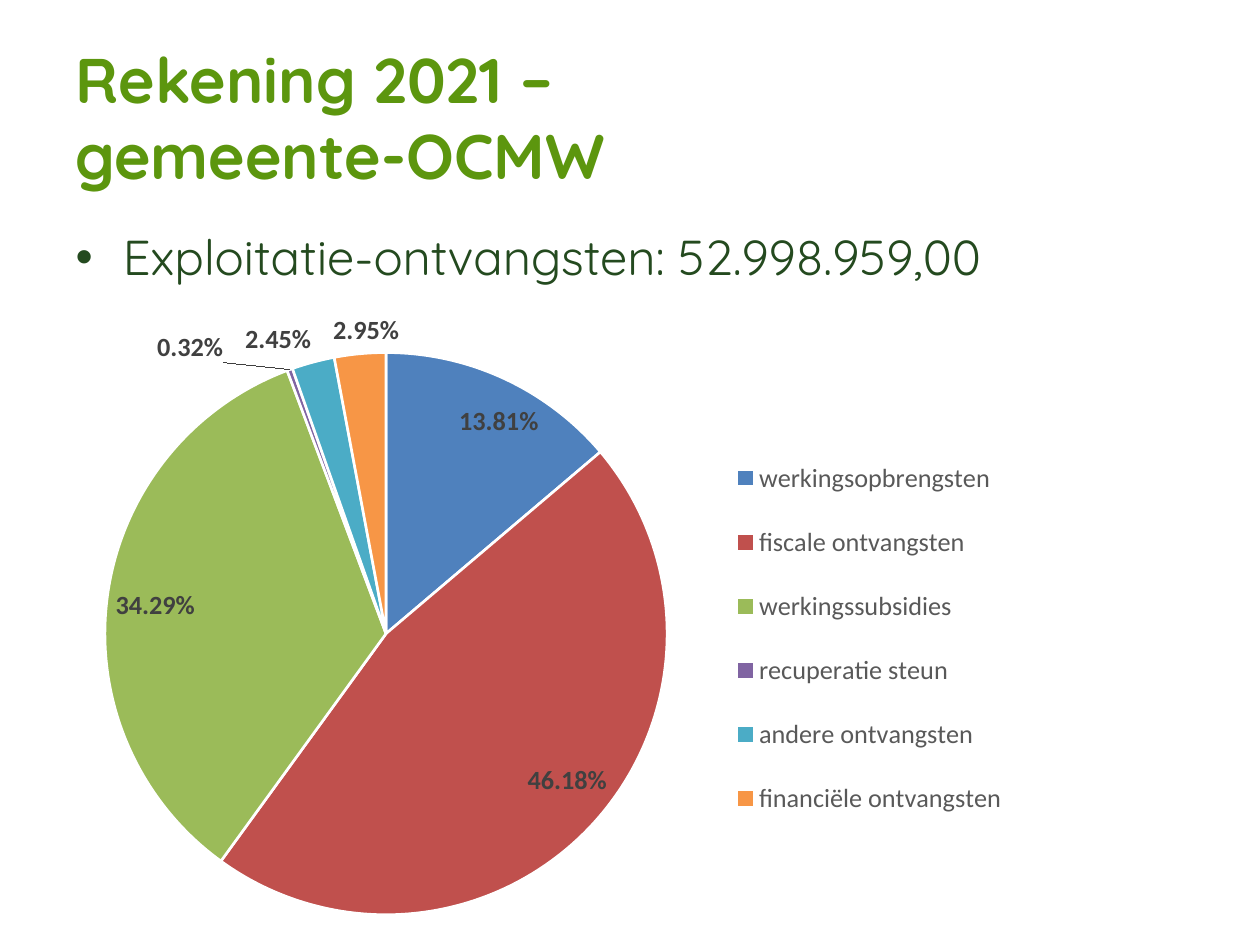
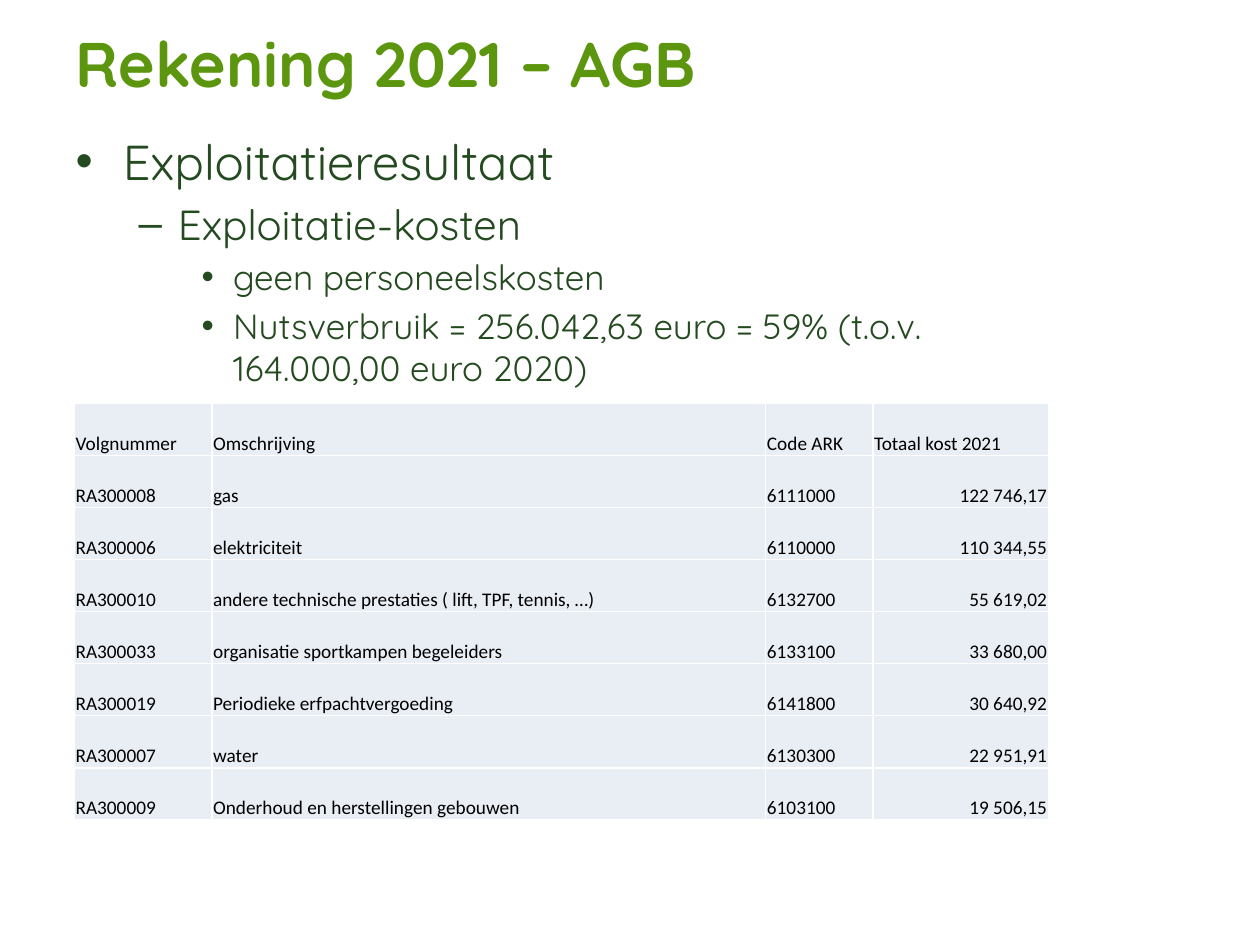
from lxml import etree
from pptx import Presentation
from pptx.chart.data import CategoryChartData
from pptx.dml.color import RGBColor
from pptx.enum.chart import XL_CHART_TYPE as ChartType
from pptx.enum.chart import XL_LABEL_POSITION as LabelPosition
from pptx.enum.chart import XL_LEGEND_POSITION as LegendPosition
from pptx.enum.text import MSO_ANCHOR as Anchor
from pptx.enum.text import MSO_AUTO_SIZE as AutoSize
from pptx.enum.text import PP_ALIGN as Align
from pptx.oxml.ns import qn
from pptx.util import Inches, Pt

# Shared style
TITLE_GREEN = RGBColor(0x5C, 0x96, 0x0E)
BODY_GREEN = RGBColor(0x24, 0x4A, 0x1F)
BLACK = RGBColor(0x00, 0x00, 0x00)
WHITE = RGBColor(0xFF, 0xFF, 0xFF)
LABEL_GREY = RGBColor(0x40, 0x40, 0x40)
LEGEND_GREY = RGBColor(0x59, 0x59, 0x59)
CELL_FILL = RGBColor(0xE9, 0xED, 0xF4)
BLUE = RGBColor(0x4F, 0x81, 0xBD)
RED = RGBColor(0xC0, 0x50, 0x4D)
GREEN = RGBColor(0x9B, 0xBB, 0x59)
PURPLE = RGBColor(0x80, 0x64, 0xA2)
TEAL = RGBColor(0x4B, 0xAC, 0xC6)
ORANGE = RGBColor(0xF7, 0x96, 0x46)
TEXT_FONT = "Quicksand"
DATA_FONT = "Calibri"
BODY_SIZES = (28, 24, 20)

# Grid of 100 columns and 75 rows
WIDTH, HEIGHT = Inches(10), Inches(7.5)
COLUMN, ROW = WIDTH / 100, HEIGHT / 75

RECEIPTS = [
    ("werkingsopbrengsten", 13.81, BLUE),
    ("fiscale ontvangsten", 46.18, RED),
    ("werkingssubsidies", 34.29, GREEN),
    ("recuperatie steun", 0.32, PURPLE),
    ("andere ontvangsten", 2.45, TEAL),
    ("financiële ontvangsten", 2.95, ORANGE),
]
COST_COLUMNS = (1.09, 4.39, 0.85, 1.39)
COSTS = [
    ("Volgnummer", "Omschrijving", "Code ARK", "Totaal kost 2021"),
    ("RA300008", "gas", "6111000", "122 746,17"),
    ("RA300006", "elektriciteit", "6110000", "110 344,55"),
    ("RA300010", "andere technische prestaties ( lift, TPF, tennis, …)", "6132700", "55 619,02"),
    ("RA300033", "organisatie sportkampen begeleiders", "6133100", "33 680,00"),
    ("RA300019", "Periodieke erfpachtvergoeding", "6141800", "30 640,92"),
    ("RA300007", "water", "6130300", "22 951,91"),
    ("RA300009", "Onderhoud en herstellingen gebouwen", "6103100", "19 506,15"),
]


def grid_box(left, top, columns, rows):
    return (int(left * COLUMN), int(top * ROW), int(columns * COLUMN), int(rows * ROW))


def style_font(font, name, size, color, bold=False):
    font.name, font.size, font.bold = name, Pt(size), bold
    font.color.rgb = color


def move(shape, box):
    shape.left, shape.top, shape.width, shape.height = box


def add_title(slide, box, text, lifted_rows=0):
    """Left title; lifted_rows reserves room below the text."""
    title = slide.shapes.title
    move(title, box)
    frame = title.text_frame
    frame.text = text
    frame.auto_size = AutoSize.NONE
    frame.vertical_anchor = Anchor.MIDDLE
    if lifted_rows:
        frame.margin_top, frame.margin_bottom = 0, int(lifted_rows * ROW)
    paragraph = frame.paragraphs[0]
    paragraph.alignment = Align.LEFT
    style_font(paragraph.font, TEXT_FONT, 36, TITLE_GREEN, True)


def add_body(slide, box, items):
    """Bulleted list of (level, text) items."""
    body = slide.placeholders[1]
    move(body, box)
    frame = body.text_frame
    frame.text = "\n".join(text for _, text in items)
    frame.auto_size = AutoSize.NONE
    for paragraph, (level, _) in zip(frame.paragraphs, items):
        paragraph.level = level
        style_font(paragraph.font, TEXT_FONT, BODY_SIZES[level], BODY_GREEN)
    frame.paragraphs[0].space_before = Pt(0)


def set_chart_layout(element, position, index, inner=False):
    """Fix a chart part at shares (x, y, w, h) of the chart."""
    for old_layout in element.findall(qn("c:layout")):
        element.remove(old_layout)
    layout = etree.Element(qn("c:layout"))
    manual = etree.SubElement(layout, qn("c:manualLayout"))
    settings = [("layoutTarget", "inner")] if inner else []
    settings += [("xMode", "edge"), ("yMode", "edge"), *zip("xywh", position)]
    for tag, value in settings:
        etree.SubElement(manual, qn(f"c:{tag}")).set("val", str(value))
    element.insert(index, layout)


def add_receipts_pie(slide, box):
    data = CategoryChartData()
    data.categories = [name for name, _, _ in RECEIPTS]
    data.add_series("Series 1", [value for _, value, _ in RECEIPTS])
    chart = slide.shapes.add_chart(ChartType.PIE, *box, data).chart
    chart.has_title = False
    style_font(chart.font, DATA_FONT, 10, BLACK)
    plot = chart.plots[0]
    plot.vary_by_categories = True
    series = plot.series[0]

    # Slices
    for index, (_, _, color) in enumerate(RECEIPTS):
        slice_format = series.points[index].format
        slice_format.fill.solid()
        slice_format.fill.fore_color.rgb = color
        slice_format.line.color.rgb = WHITE
        slice_format.line.width = Pt(1.5)

    # Percentages
    labels = series.data_labels
    labels.show_value, labels.show_percentage = False, True
    labels.number_format, labels.number_format_is_linked = "0.00%", False
    labels.position = LabelPosition.BEST_FIT
    style_font(labels.font, DATA_FONT, 15, LABEL_GREY, True)

    # Legend and plot area
    chart.has_legend = True
    legend = chart.legend
    legend.position = LegendPosition.RIGHT
    legend.include_in_layout = False
    style_font(legend.font, DATA_FONT, 15, LEGEND_GREY)
    plot_area = chart.element.find(".//" + qn("c:plotArea"))
    legend_area = chart.element.find(".//" + qn("c:legend"))
    set_chart_layout(plot_area, (0.164, 0.14, 0.516, 0.728), 0, inner=True)
    set_chart_layout(legend_area, (0.735, 0.24, 0.26, 0.54), 1)


def set_cell_borders(cell, color):
    properties = cell._tc.get_or_add_tcPr()
    for index, side in enumerate(("lnL", "lnR", "lnT", "lnB")):
        line = etree.Element(qn(f"a:{side}"), w=str(Pt(1)))
        fill = etree.SubElement(line, qn("a:solidFill"))
        etree.SubElement(fill, qn("a:srgbClr"), val=str(color))
        properties.insert(index, line)


def add_cost_table(slide, box):
    width, height = box[2:]
    table = slide.shapes.add_table(len(COSTS), len(COST_COLUMNS), *box).table
    table.first_row = table.horz_banding = False
    for column, share in zip(table.columns, COST_COLUMNS):
        column.width = int(width * share / sum(COST_COLUMNS))
    for row_index, values in enumerate(COSTS):
        table.rows[row_index].height = height // len(COSTS)
        for column_index, value in enumerate(values):
            cell = table.cell(row_index, column_index)
            cell.text = value
            cell.vertical_anchor = Anchor.BOTTOM
            cell.margin_left = cell.margin_right = cell.margin_top = Inches(0.01)
            cell.margin_bottom = 0
            cell.fill.solid()
            cell.fill.fore_color.rgb = CELL_FILL
            set_cell_borders(cell, WHITE)
            paragraph = cell.text_frame.paragraphs[0]
            style_font(paragraph.font, DATA_FONT, 11, BLACK)
            if row_index and column_index == len(values) - 1:
                paragraph.alignment = Align.RIGHT


def build_receipts_slide(slide):
    add_title(slide, grid_box(5, 3, 82, 12.5), "Rekening 2021 –\vgemeente-OCMW")
    add_body(slide, grid_box(5, 17.5, 82, 49.5),
             [(0, "Exploitatie-ontvangsten: 52.998.959,00")])
    add_receipts_pie(slide, grid_box(-5.9, 19.4, 86.6, 61.3))


def build_costs_slide(slide):
    add_title(slide, grid_box(5, 3, 82, 10.1), "Rekening 2021 – AGB", lifted_rows=6.2)
    add_body(slide, grid_box(5, 9.9, 82, 57.1), [
        (0, "Exploitatieresultaat"),
        (1, "Exploitatie-kosten"),
        (2, "geen personeelskosten"),
        (2, "Nutsverbruik = 256.042,63 euro = 59% (t.o.v. 164.000,00 euro 2020)"),
    ])
    add_cost_table(slide, grid_box(5.9, 32, 77.3, 33.1))


def main():
    presentation = Presentation()
    presentation.slide_width, presentation.slide_height = WIDTH, HEIGHT
    title_and_content = presentation.slide_layouts[1]
    for build in (build_receipts_slide, build_costs_slide):
        build(presentation.slides.add_slide(title_and_content))
    presentation.save("out.pptx")


if __name__ == "__main__":
    main()
